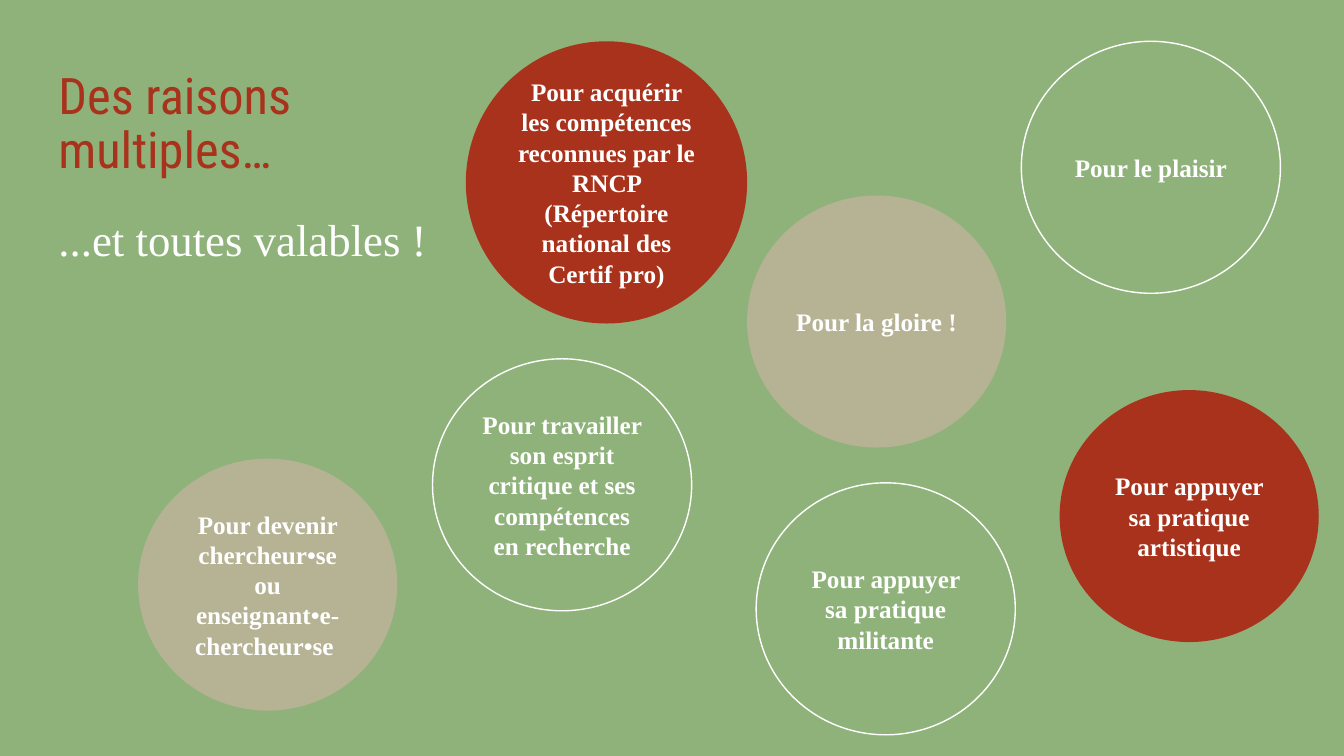
from dataclasses import dataclass
from typing import Optional

from lxml import etree
from pptx import Presentation
from pptx.dml.color import RGBColor
from pptx.enum.shapes import MSO_SHAPE
from pptx.enum.text import MSO_ANCHOR, MSO_AUTO_SIZE, PP_ALIGN
from pptx.oxml.ns import qn
from pptx.util import Inches, Pt

OVAL = MSO_SHAPE.OVAL
TOP, MIDDLE, BOTTOM = MSO_ANCHOR.TOP, MSO_ANCHOR.MIDDLE, MSO_ANCHOR.BOTTOM
LEFT, CENTER = PP_ALIGN.LEFT, PP_ALIGN.CENTER
NO_AUTOFIT = MSO_AUTO_SIZE.NONE


@dataclass(frozen=True)
class Theme:
    background: str = "8FB27A"
    red: str = "A8321B"
    beige: str = "B6B294"
    white: str = "FFFFFF"
    heading_font: str = "Roboto Condensed"
    text_font: str = "Times New Roman"
    title_size: int = 36
    subtitle_size: int = 32
    reason_size: int = 18
    outline_width: int = 1


@dataclass(frozen=True)
class Reason:
    """A bubble; without a fill it is drawn as a white outline."""
    text: str
    left: float
    top: float
    fill: Optional[str] = None
    width: float = 2.57
    height: float = 2.5


THEME = Theme()

REASONS = [
    Reason("Pour devenir chercheur•se ou enseignant•e-chercheur•se ",
           1.37, 4.55, THEME.beige),
    Reason("Pour travailler son esprit critique et ses compétences en recherche",
           4.29, 3.56),
    Reason("Pour appuyer sa pratique militante", 7.5, 4.79),
    Reason("Pour le plaisir", 10.13, 0.41),
    Reason("Pour appuyer sa pratique artistique", 10.51, 3.87, THEME.red),
    Reason("Pour acquérir les compétences reconnues par le RNCP "
           "(Répertoire national des Certif pro)",
           4.62, 0.41, THEME.red, width=2.79, height=2.8),
    Reason("Pour la gloire !", 7.41, 1.94, THEME.beige),
]


def color(code: str) -> RGBColor:
    return RGBColor.from_string(code)


def write(shape, text: str, *, size: int, ink: str, font: str = THEME.text_font,
          bold: bool = False, align=LEFT, anchor=MIDDLE,
          line_spacing: float = 1.0, space_after: float = 0) -> None:
    frame = shape.text_frame
    frame.word_wrap = True
    frame.auto_size = NO_AUTOFIT
    frame.vertical_anchor = anchor
    paragraph = frame.paragraphs[0]
    paragraph.alignment = align
    paragraph.line_spacing = line_spacing
    paragraph.space_before = Pt(0)
    paragraph.space_after = Pt(space_after)
    run = paragraph.add_run()
    run.text = text
    run.font.name = font
    run.font.size = Pt(size)
    run.font.bold = bold
    run.font.color.rgb = color(ink)


def place(placeholder, left: float, top: float, width: float, height: float) -> None:
    placeholder.left, placeholder.top = Inches(left), Inches(top)
    placeholder.width, placeholder.height = Inches(width), Inches(height)
    frame = placeholder.text_frame
    frame.margin_left = frame.margin_right = Inches(0.13)
    frame.margin_top = frame.margin_bottom = Inches(0.13)


def remove_bullet(paragraph) -> None:
    properties = paragraph._p.get_or_add_pPr()
    properties.set("marL", "0")
    properties.set("indent", "0")
    etree.SubElement(properties, qn("a:buNone"))


def add_reason(slide, reason: Reason) -> None:
    bubble = slide.shapes.add_shape(OVAL, Inches(reason.left), Inches(reason.top),
                                    Inches(reason.width), Inches(reason.height))
    bubble.shadow.inherit = False
    if reason.fill:
        bubble.fill.solid()
        bubble.fill.fore_color.rgb = color(reason.fill)
        bubble.line.fill.background()
    else:
        bubble.fill.background()
        bubble.line.color.rgb = color(THEME.white)
        bubble.line.width = Pt(THEME.outline_width)
    write(bubble, reason.text, size=THEME.reason_size, ink=THEME.white,
          bold=True, align=CENTER)


def main() -> None:
    deck = Presentation()
    deck.slide_width, deck.slide_height = Inches(13.33), Inches(7.5)
    slide = deck.slides.add_slide(deck.slide_layouts[1])
    slide.background.fill.solid()
    slide.background.fill.fore_color.rgb = color(THEME.background)

    title, subtitle = slide.placeholders
    place(title, 0.45, 0.81, 4.35, 1.1)
    write(title, "Des raisons multiples…", size=THEME.title_size, ink=THEME.red,
          font=THEME.heading_font, anchor=BOTTOM, line_spacing=0.9)
    place(subtitle, 0.45, 2.03, 4.09, 4.64)
    write(subtitle, "...et toutes valables !", size=THEME.subtitle_size,
          ink=THEME.white, anchor=TOP, line_spacing=0.9, space_after=21.3)
    remove_bullet(subtitle.text_frame.paragraphs[0])

    for reason in REASONS:
        add_reason(slide, reason)
    deck.save("out.pptx")


if __name__ == "__main__":
    main()
